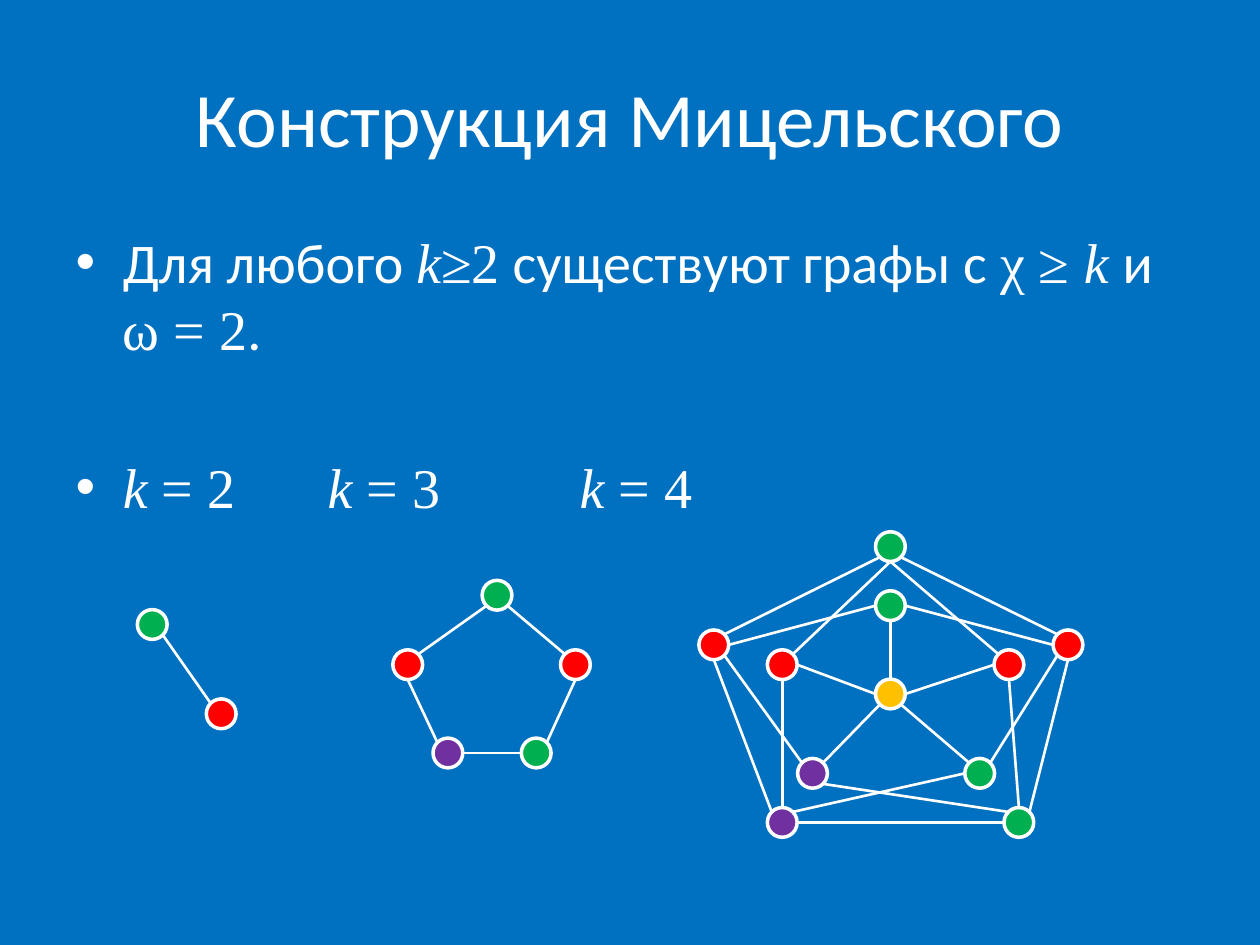
from math import cos, radians, sin

from lxml.etree import SubElement
from pptx import Presentation
from pptx.dml.color import RGBColor
from pptx.enum.shapes import MSO_CONNECTOR, MSO_SHAPE
from pptx.oxml.ns import qn
from pptx.util import Cm, Pt

WHITE = RGBColor(0xFF, 0xFF, 0xFF)
BLUE = RGBColor(0x00, 0x70, 0xC0)
GREEN = RGBColor(0x00, 0xB0, 0x50)
RED = RGBColor(0xFF, 0x00, 0x00)
PURPLE = RGBColor(0x70, 0x30, 0xA0)
ORANGE = RGBColor(0xFF, 0xC0, 0x00)

SANS, SERIF = "Calibri", "Times New Roman"
TITLE = "Конструкция Мицельского"

# Each run: text, font, italic
STATEMENT = [
    ("Для любого ", SANS, False),
    ("k", SERIF, True),
    ("≥2", SERIF, False),
    (" cуществуют графы с ", SANS, False),
    ("χ ≥ ", SERIF, False),
    ("k ", SERIF, True),
    ("и ", SANS, False),
    ("ω = 2", SERIF, False),
    (".", SANS, False),
]
CASES = [
    ("k ", SERIF, True),
    ("= 2\t\t", SERIF, False),
    ("k ", SERIF, True),
    ("= 3\t\t\t", SERIF, False),
    ("k ", SERIF, True),
    ("= 4", SERIF, False),
]

RING_COLORS = {"top": GREEN, "left": RED, "right": RED,
               "foot left": PURPLE, "foot right": GREEN}
RING_EDGES = [
    ("right", "NW", "top", "SE"),
    ("left", "NE", "top", "SW"),
    ("left", "S", "foot left", "NW"),
    ("foot left", "E", "foot right", "W"),
    ("foot right", "NE", "right", "S"),
]


def ring(name, centers):
    """Vertices of a five-cycle, in the order of RING_COLORS."""
    return {f"{name} {place}": (x, y, color)
            for (place, color), (x, y) in zip(RING_COLORS.items(), centers)}


def ring_edges(name):
    return [(f"{name} {a}", side_a, f"{name} {b}", side_b)
            for a, side_a, b, side_b in RING_EDGES]


# Vertex centres in cm
VERTICES = {
    "pair upper": (3.07, 12.59, GREEN),
    "pair lower": (4.46, 14.39, RED),
    **ring("cycle", [(10.02, 12), (8.22, 13.4), (11.6, 13.4),
                     (9.03, 15.18), (10.81, 15.18)]),
    **ring("outer", [(17.95, 11.02), (14.39, 13), (21.53, 13),
                     (15.77, 16.58), (20.54, 16.58)]),
    **ring("inner", [(17.95, 12.21), (15.77, 13.4), (20.34, 13.4),
                     (16.38, 15.59), (19.75, 15.59)]),
    "hub": (17.95, 13.99, ORANGE),
}

# Each edge: vertex, side it leaves, vertex, side it reaches
EDGES = [
    ("pair lower", "NW", "pair upper", "SE"),
    *ring_edges("cycle"),
    *ring_edges("outer"),
    ("inner left", "NE", "outer top", "S"),
    ("inner right", "NW", "outer top", "S"),
    ("outer left", "E", "inner top", "W"),
    ("outer right", "W", "inner top", "E"),
    ("outer left", "SE", "inner foot left", "NW"),
    ("outer right", "SW", "inner foot right", "NE"),
    ("inner left", "S", "outer foot left", "N"),
    ("inner right", "S", "outer foot right", "N"),
    ("inner foot left", "SE", "outer foot right", "NW"),
    ("inner foot right", "W", "outer foot left", "NE"),
    ("hub", "N", "inner top", "S"),
    ("hub", "W", "inner left", "E"),
    ("hub", "E", "inner right", "W"),
    ("hub", "SW", "inner foot left", "NE"),
    ("hub", "SE", "inner foot right", "NW"),
]
DIAMETER = 0.6
SIDES = ["E", "SE", "S", "SW", "W", "NW", "N", "NE"]


def add_runs(paragraph, runs, size):
    for text, font, italic in runs:
        run = paragraph.add_run()
        run.text = text
        run.font.name = font
        run.font.size = Pt(size)
        run.font.italic = italic
        run.font.color.rgb = WHITE


def place(shape, left, top, width, height):
    shape.left, shape.top = Cm(left), Cm(top)
    shape.width, shape.height = Cm(width), Cm(height)


def rim_point(vertex, side):
    x, y, _ = VERTICES[vertex]
    angle = radians(45 * SIDES.index(side))
    return (Cm(x + DIAMETER / 2 * cos(angle)),
            Cm(y + DIAMETER / 2 * sin(angle)))


def add_edge(slide, start, start_side, end, end_side):
    edge = slide.shapes.add_connector(
        MSO_CONNECTOR.STRAIGHT,
        *rim_point(start, start_side), *rim_point(end, end_side))
    edge.line.color.rgb = WHITE
    edge.line.width = Pt(1.5)
    SubElement(edge._element.spPr, qn("a:effectLst"))


def add_vertex(slide, x, y, color):
    vertex = slide.shapes.add_shape(
        MSO_SHAPE.OVAL, Cm(x - DIAMETER / 2), Cm(y - DIAMETER / 2),
        Cm(DIAMETER), Cm(DIAMETER))
    vertex.shadow.inherit = False
    vertex.fill.solid()
    vertex.fill.fore_color.rgb = color
    vertex.line.color.rgb = WHITE
    vertex.line.width = Pt(2)


def main():
    presentation = Presentation()
    presentation.slide_width, presentation.slide_height = Cm(25.4), Cm(19.05)
    slide = presentation.slides.add_slide(presentation.slide_layouts[1])
    slide.background.fill.solid()
    slide.background.fill.fore_color.rgb = BLUE

    title, body = slide.placeholders
    place(title, 1.27, 0.76, 22.86, 3.18)
    add_runs(title.text_frame.paragraphs[0], [(TITLE, SANS, False)], 44)

    place(body, 1.27, 4.45, 22.86, 12.57)
    add_runs(body.text_frame.paragraphs[0], STATEMENT, 32)
    cases = body.text_frame.add_paragraph()
    cases.space_before = Pt(52)
    add_runs(cases, CASES, 32)

    for edge in EDGES:
        add_edge(slide, *edge)
    for vertex in VERTICES.values():
        add_vertex(slide, *vertex)

    presentation.save("out.pptx")


if __name__ == "__main__":
    main()
